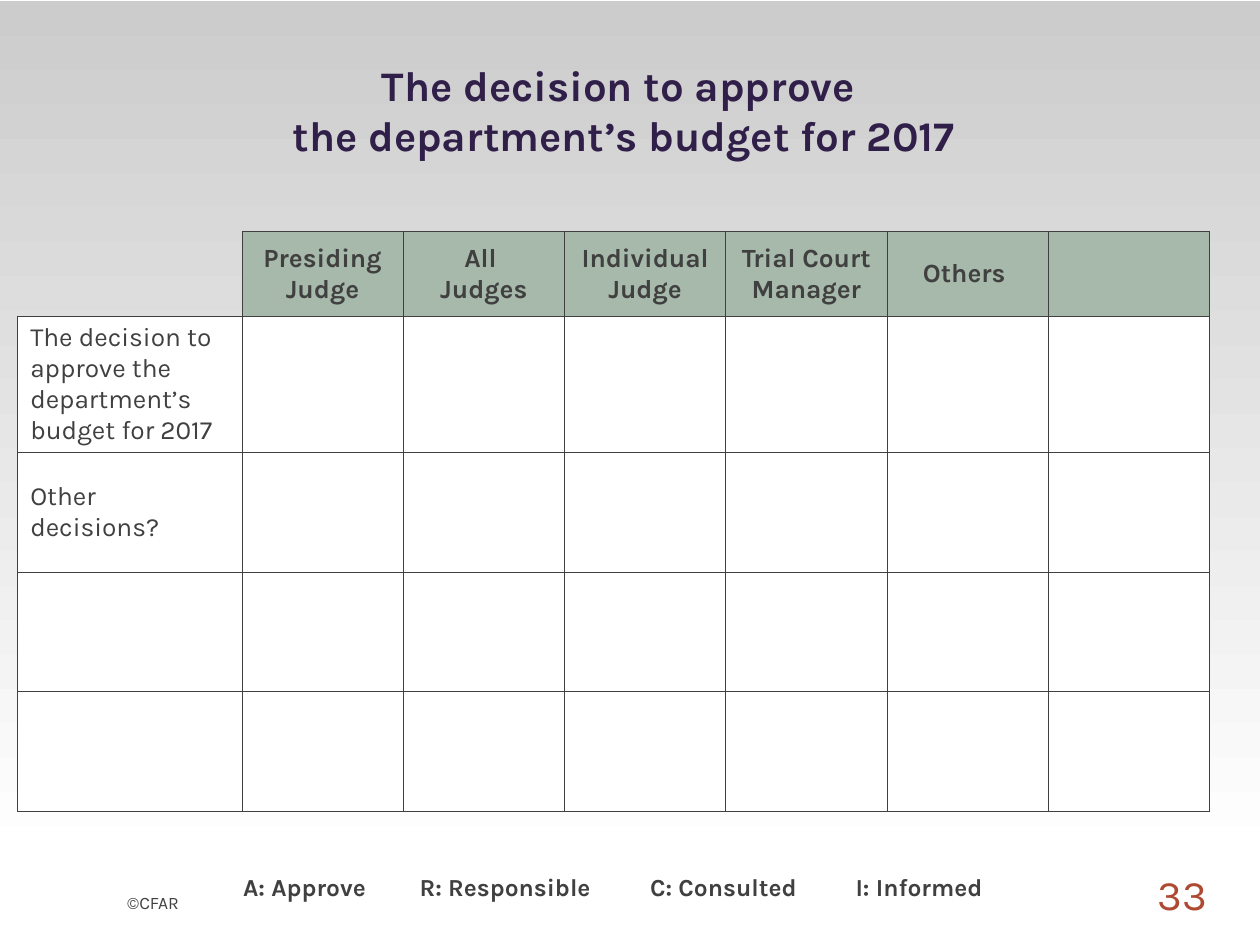
from pptx import Presentation
from pptx.dml.color import RGBColor
from pptx.enum.shapes import MSO_SHAPE as Shape
from pptx.enum.text import MSO_ANCHOR as Anchor, MSO_AUTO_SIZE as Fit, PP_ALIGN as Align
from pptx.oxml import parse_xml
from pptx.oxml.ns import nsdecls
from pptx.util import Inches, Pt

HEADS = ["Presiding Judge", "All \nJudges", "Individual Judge",
         "Trial Court Manager", "Others ", ""]
SIDES = ["The decision to approve the department’s budget for 2017",
         "Other decisions?", "", ""]
LEGEND = [(1.93, 1.54, "A: Approve"), (3.33, 1.7, "R: Responsible"),
          (5.16, 1.7, "C: Consulted"), (6.79, 1.7, "I: Informed")]


def color(code):
    return RGBColor.from_string(code)


def write(frame, text, size=14, ink="404040", bold=False, align=Align.LEFT,
          face="Karla"):
    para = frame.paragraphs[0]
    para.text = text
    para.alignment = align
    for run in para.runs:
        run.font.name = face
        run.font.size = Pt(size)
        run.font.bold = bold
        run.font.color.rgb = color(ink)


def border(cell, sides, ink):
    props = cell._tc.get_or_add_tcPr()
    for side in "LRTB":
        fill = "<a:noFill/>"
        if side in sides:
            fill = f'<a:solidFill><a:srgbClr val="{ink}"/></a:solidFill>'
        props.append(parse_xml(
            f'<a:ln{side} {nsdecls("a")} w="{Pt(0.5)}">{fill}</a:ln{side}>'))


class Deck:
    ink = "404040"
    navy = "301F49"
    rust = "AE4A32"
    sage = "A7B9AA"
    white = "FFFFFF"
    gray = "CCCCCC"

    def __init__(self):
        self.file = Presentation()
        self.file.slide_width = Inches(10)
        self.file.slide_height = Inches(7.5)
        self.slide = self.file.slides.add_slide(self.file.slide_layouts[5])

    def frame(self, frame, pads, anchor, fit=Fit.NONE):
        frame.word_wrap = True
        frame.auto_size = fit
        frame.vertical_anchor = anchor
        (frame.margin_left, frame.margin_top,
         frame.margin_right, frame.margin_bottom) = map(Inches, pads)
        return frame

    def shade(self, x, y, w, h):
        shapes = self.slide.shapes
        rect = shapes.add_shape(Shape.RECTANGLE, *map(Inches, (x, y, w, h)))
        rect.shadow.inherit = False
        rect.line.fill.background()
        rect.fill.gradient()
        rect.fill.gradient_angle = 270
        for stop, place, code in zip(rect.fill.gradient_stops, (0, 1),
                                     (self.gray, self.white)):
            stop.position = place
            stop.color.rgb = color(code)
        shapes._spTree.insert(2, rect._element)

    def title(self, x, y, w, h, text):
        head = self.slide.shapes.title
        head.left, head.top, head.width, head.height = map(Inches, (x, y, w, h))
        frame = self.frame(head.text_frame, (0, 0.05, 0.1, 0.05), Anchor.BOTTOM)
        write(frame, text, size=24, ink=self.navy, bold=True, align=Align.CENTER)

    def label(self, x, y, w, h, text, pads=(0, 0, 0, 0), anchor=Anchor.MIDDLE,
              fit=Fit.NONE, **style):
        box = self.slide.shapes.add_textbox(*map(Inches, (x, y, w, h)))
        write(self.frame(box.text_frame, pads, anchor, fit), text, **style)

    def grid(self, x, y, wide, tall, heads, sides):
        rows = [["", *heads]] + [[side] + [""] * len(heads) for side in sides]
        table = self.slide.shapes.add_table(
            len(rows), len(rows[0]), Inches(x), Inches(y),
            Inches(sum(wide)), Inches(sum(tall))).table
        table.first_row = table.horz_banding = False
        for col, width in zip(table.columns, wide):
            col.width = Inches(width)
        for row, height in zip(table.rows, tall):
            row.height = Inches(height)
        for r, line in enumerate(rows):
            for c, text in enumerate(line):
                self.cell(table.cell(r, c), text, r == 0, c == 0)

    def cell(self, cell, text, head, side):
        corner = head and side
        border(cell, "RB" if corner else "LRTB", self.ink)
        cell.vertical_anchor = Anchor.MIDDLE
        if corner:
            cell.fill.background()
        else:
            cell.fill.solid()
            cell.fill.fore_color.rgb = color(self.sage if head else self.white)
        if text:
            write(cell.text_frame, text, size=15, ink=self.ink, bold=head,
                  align=Align.CENTER if head else Align.LEFT)


def main():
    deck = Deck()
    deck.shade(0, 0.01, 10, 6.82)
    deck.title(0, 0.18, 10, 1.14,
               "The decision to approve \nthe department’s budget for 2017")
    deck.label(1.01, 7.01, 0.48, 0.31, "©CFAR", size=10)
    deck.label(8.9, 6.83, 0.68, 0.52, "33", size=24, ink=deck.rust,
               align=Align.RIGHT)
    deck.grid(0.14, 1.84, [1.78] + [1.28] * len(HEADS),
              [0.67] + [0.95] * len(SIDES), HEADS, SIDES)
    for left, width, text in LEGEND:
        deck.label(left, 6.87, width, 0.34, text, pads=(0, 0.05, 0.1, 0.05),
                   anchor=Anchor.TOP, fit=Fit.SHAPE_TO_FIT_TEXT, bold=True)
    deck.file.save("out.pptx")


if __name__ == "__main__":
    main()
